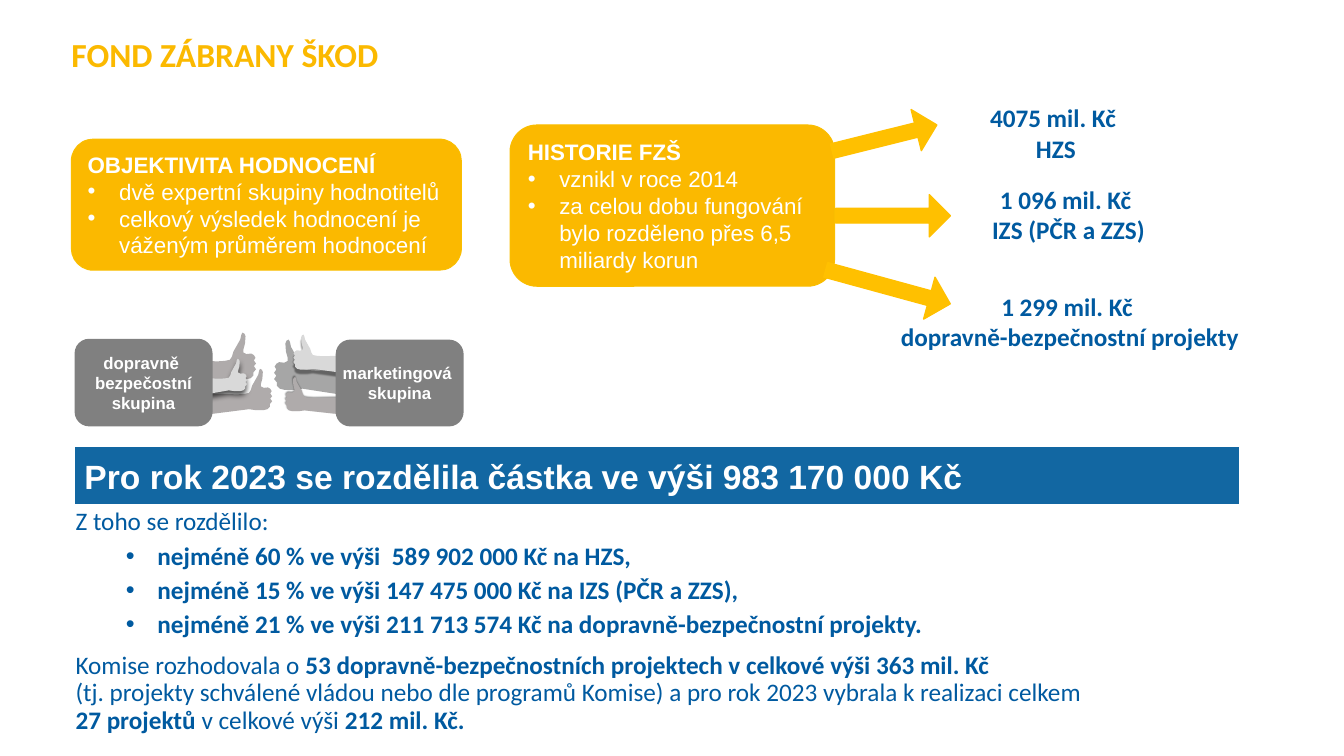
from pptx import Presentation
from pptx.dml.color import RGBColor
from pptx.enum.shapes import MSO_SHAPE
from pptx.enum.text import MSO_ANCHOR, PP_ALIGN
from pptx.oxml.ns import qn
from pptx.util import Pt
from lxml.etree import SubElement

YELLOW, ARROW, BLUE, BANNER = "FBB900", "FFC000", "005AA0", "1267A2"
GRAY, HAND, PALE, WHITE = "808080", "AFABAB", "D9D9D9", "FFFFFF"

# Thumb-up fist, pointing left: distance from the fingertips and from the
# top, both as shares of the hand's height. The wrist is added per hand.
FIST = [(.75, .55), (.6, .54), (.5, .52), (.46, .46), (.43, .36), (.39, .29),
        (.3, .13), (.28, .04), (.26, 0), (.22, .02), (.2, .07), (.21, .21),
        (.24, .32), (.24, .38), (.18, .41), (.09, .4), (.04, .43), (.01, .48),
        (.04, .53), (0, .59), (.04, .64), (0, .7), (.05, .76), (.05, .82),
        (.1, .87), (.18, .89), (.36, .89), (.5, .87)]


def color(value):
    return RGBColor.from_string(value)


def paint(shape, fill, line=None, line_width=1):
    shape.shadow.inherit = False
    shape.fill.solid()
    shape.fill.fore_color.rgb = color(fill)
    if line:
        shape.line.color.rgb = color(line)
        shape.line.width = Pt(line_width)
    else:
        shape.line.fill.background()


def add_shape(page, kind, box, fill, line=None, line_width=1):
    shape = page.shapes.add_shape(kind, *map(Pt, box))
    paint(shape, fill, line, line_width)
    return shape


def add_bullet(para, left):
    properties = para._p.get_or_add_pPr()
    properties.set("marL", str(Pt(left)))
    properties.set("indent", str(-Pt(22.5)))
    SubElement(properties, qn("a:buFont"), typeface="Arial")
    SubElement(properties, qn("a:buChar"), char="•")


def write(frame, lines, size, font, ink, align=PP_ALIGN.LEFT, bullet_left=22.5,
          wrap=True, anchor=MSO_ANCHOR.TOP):
    """Fill a frame; a star toggles bold and a leading bullet makes a list item."""
    frame.word_wrap = wrap
    frame.vertical_anchor = anchor
    for index, line in enumerate(lines):
        para = frame.paragraphs[0] if index == 0 else frame.add_paragraph()
        para.alignment = align
        if line.startswith("•"):
            add_bullet(para, bullet_left)
        for part_index, part in enumerate(line.lstrip("•").split("*")):
            for row_index, row in enumerate(part.split("\v")):
                if row_index:
                    para.add_line_break()
                if row:
                    span = para.add_run()
                    span.text = row
                    span.font.size = Pt(size)
                    span.font.name = font
                    span.font.bold = part_index % 2 == 1
                    span.font.color.rgb = color(ink)


def clear_margins(frame):
    frame.margin_left = frame.margin_right = 0
    frame.margin_top = frame.margin_bottom = 0


def add_title(page, box):
    frame = page.shapes.add_textbox(*map(Pt, box)).text_frame
    clear_margins(frame)
    write(frame, ["*FOND ZÁBRANY ŠKOD"], 24, "Calibri", YELLOW)


def add_card(page, box, lines):
    card = add_shape(page, MSO_SHAPE.ROUNDED_RECTANGLE, box, YELLOW, "FABE00", 0.75)
    write(card.text_frame, lines, 16, "Arial", WHITE, anchor=MSO_ANCHOR.MIDDLE)


def add_hand(page, box, fill, points_right, shadow=None):
    """Draw a thumb-up hand; shadow is opacity, blur, distance and angle."""
    left, top, width, height = box
    wrist = width / height
    points = []
    for across, down in [(wrist, .53), *FIST, (wrist, 1)]:
        offset = across * height
        x = left + width - offset if points_right else left + offset
        points.append((Pt(x), Pt(top + down * height)))
    builder = page.shapes.build_freeform(*points[0])
    builder.add_line_segments(points[1:], close=True)
    hand = builder.convert_to_shape()
    paint(hand, fill)
    if shadow:
        opacity, blur, distance, angle = shadow
        effects = hand._element.spPr.find(qn("a:effectLst"))
        outer = SubElement(effects, qn("a:outerShdw"), blurRad=str(Pt(blur)),
                           dist=str(Pt(distance)), dir=str(angle * 60000))
        tint = SubElement(outer, qn("a:srgbClr"), val="000000")
        SubElement(tint, qn("a:alpha"), val=str(opacity * 1000))


def add_group(page, box, lines, hands, points_right):
    for hand_box, fill, shadow in hands:
        add_hand(page, hand_box, fill, points_right, shadow)
    plate = add_shape(page, MSO_SHAPE.ROUNDED_RECTANGLE, box, GRAY)
    write(plate.text_frame, lines, 12, "Arial", WHITE, PP_ALIGN.CENTER,
          wrap=False, anchor=MSO_ANCHOR.MIDDLE)


def add_payout(page, arrow_box, angle, text_box, lines):
    arrow = add_shape(page, MSO_SHAPE.RIGHT_ARROW, arrow_box, ARROW, ARROW)
    arrow.adjustments[0] = 0.346
    arrow.rotation = angle
    label = page.shapes.add_textbox(*map(Pt, text_box))
    write(label.text_frame, lines, 18, "Calibri", BLUE, PP_ALIGN.CENTER, wrap=False)


def add_banner(page, box):
    banner = add_shape(page, MSO_SHAPE.RECTANGLE, box, BANNER, WHITE)
    write(banner.text_frame, ["*Pro rok 2023 se rozdělila částka ve výši 983 170 000 Kč"],
          24, "Arial", WHITE, anchor=MSO_ANCHOR.MIDDLE)


def add_breakdown(page, box):
    frame = add_shape(page, MSO_SHAPE.RECTANGLE, box, WHITE).text_frame
    clear_margins(frame)
    write(frame, [
        "Z toho se rozdělilo:",
        "•*nejméně 60 % ve výši  589 902 000 Kč na HZS,",
        "•*nejméně 15 % ve výši 147 475 000 Kč na IZS (PČR a ZZS),",
        "•*nejméně 21 % ve výši 211 713 574 Kč na dopravně-bezpečnostní projekty.",
        "Komise rozhodovala o *53 dopravně-bezpečnostních projektech v celkové výši "
        "363 mil. Kč\v*(tj. projekty schválené vládou nebo dle programů Komise) a pro "
        "rok 2023 vybrala k realizaci celkem \v*27 projektů *v celkové výši *212 mil. Kč.",
    ], 18, "Calibri", BLUE, bullet_left=58.5)
    for para, space in zip(frame.paragraphs, (0, 5, 5, 5, 10)):
        para.line_spacing = 0.9
        para.space_before = Pt(space)


def main():
    deck = Presentation()
    deck.slide_width, deck.slide_height = Pt(960), Pt(540)
    page = deck.slides.add_slide(deck.slide_layouts[6])

    add_title(page, (51, 24.5, 744, 62.6))
    add_banner(page, (53.3, 319, 832.3, 41.8))
    add_breakdown(page, (54, 363.6, 861.8, 170))
    add_card(page, (51, 99.4, 278.6, 93.6), [
        "*OBJEKTIVITA HODNOCENÍ",
        "•dvě expertní skupiny hodnotitelů",
        "•celkový výsledek hodnocení je váženým průměrem hodnocení"])
    add_group(page, (53.3, 242, 98.6, 62.6),
              ["*dopravně ", "*bezpečostní", "*skupina"],
              [((144, 237.6, 38.9, 37.4), HAND, None),
               ((144, 263.5, 50.4, 33.1), HAND, None),
               ((144, 256.3, 32.4, 25.9), PALE, (67, 4, 3, 90))], True)
    add_group(page, (239.8, 242.6, 91.4, 62),
              ["*marketingová ", "*skupina"],
              [((195.8, 242.6, 54.1, 40.3), "A6A6A6", None),
               ((209.5, 239, 40.3, 28.1), PALE, (40, 1, 3, 90)),
               ((203.8, 269.3, 46.1, 27.4), HAND, (40, 1, 1, 270))], False)
    add_card(page, (364.3, 89.3, 231.8, 115.2), [
        "*HISTORIE FZŠ",
        "•vznikl v roce 2014",
        "•za celou dobu fungování bylo rozděleno přes 6,5 miliardy korun"])
    add_payout(page, (593.3, 83.5, 77, 30.2), 346, (691.9, 69.8, 124.6, 51),
               ["*4075 mil. Kč ", "*HZS"])
    add_payout(page, (596.9, 139, 82, 30.2), 0, (686.9, 128.2, 152.6, 51),
               ["*1 096 mil. Kč ", "*IZS (PČR a ZZS)"])
    add_payout(page, (588.2, 189.4, 92.2, 31), 15.3, (617, 204.5, 294.5, 51),
               ["*1 299 mil. Kč ", "*dopravně-bezpečnostní projekty"])
    deck.save("out.pptx")


if __name__ == "__main__":
    main()
